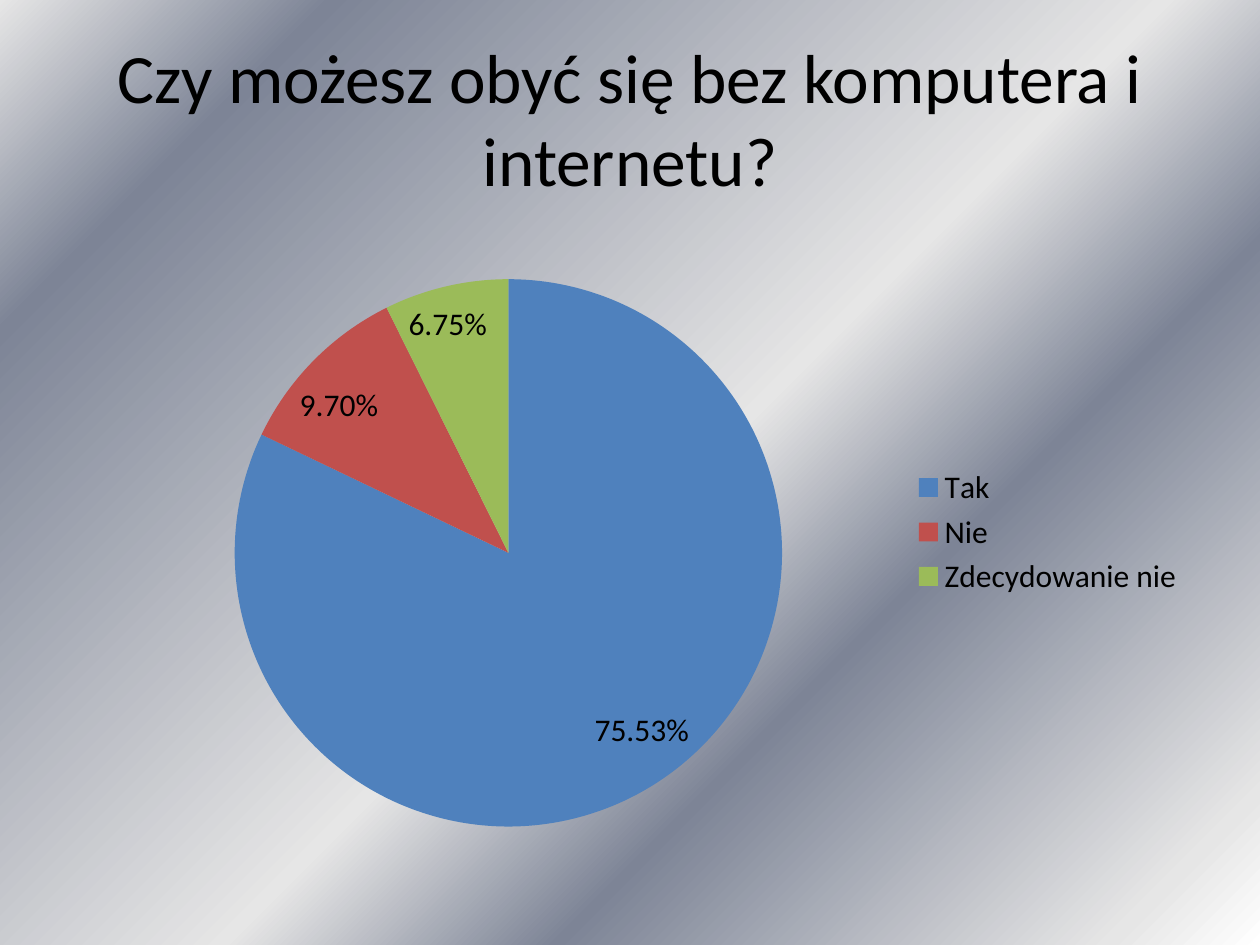
from dataclasses import dataclass

from lxml.etree import SubElement
from pptx import Presentation
from pptx.chart.data import CategoryChartData
from pptx.dml.color import RGBColor
from pptx.enum.chart import XL_CHART_TYPE, XL_LABEL_POSITION, XL_LEGEND_POSITION
from pptx.enum.text import MSO_ANCHOR, MSO_AUTO_SIZE, PP_ALIGN
from pptx.oxml.ns import qn
from pptx.util import Emu, Pt

SCALE = 914400 // 126


@dataclass(frozen=True)
class Theme:
    face: str = "Calibri"
    ink: str = "000000"
    title: float = 39.6
    body: float = 18
    slices: tuple = ("4F81BD", "C0504D", "9BBB59")
    stops: tuple = (
        (0, "FFFFFF"), (7, "E6E6E6"), (32, "7D8496"),
        (47, "E6E6E6"), (85, "7D8496"), (100, "E6E6E6"),
    )


THEME = Theme()


def px(num):
    return Emu(num * SCALE)


def apply(obj, vals):
    for key, val in vals.items():
        setattr(obj, key, val)


def place(box):
    return dict(zip(("left", "top", "width", "height"), map(px, box)))


def style(font, size):
    apply(font, {"name": THEME.face, "size": Pt(size), "bold": False})
    font.color.rgb = RGBColor.from_string(THEME.ink)


def add_back(slide):
    fill = slide.background.fill
    fill.gradient()
    fill.gradient_angle = 135
    stops = slide.background._cSld.find(".//" + qn("a:gsLst"))
    stops.clear()
    for pos, color in THEME.stops:
        stop = SubElement(stops, qn("a:gs"), pos=str(pos * 1000))
        SubElement(stop, qn("a:srgbClr"), val=color)


def add_title(slide, box, text):
    shape = slide.shapes.title
    apply(shape, place(box))
    frame = shape.text_frame
    apply(frame, {
        "text": text,
        "word_wrap": True,
        "auto_size": MSO_AUTO_SIZE.NONE,
        "vertical_anchor": MSO_ANCHOR.MIDDLE,
    })
    para = frame.paragraphs[0]
    para.alignment = PP_ALIGN.CENTER
    style(para.runs[0].font, THEME.title)


def add_pie(slide, box, shares):
    data = CategoryChartData(number_format="0.00%")
    data.categories = list(shares)
    data.add_series("Series 1", list(shares.values()))
    chart = slide.shapes.add_chart(
        XL_CHART_TYPE.PIE, *map(px, box), data).chart
    apply(chart, {"has_title": False, "has_legend": True})
    style(chart.font, THEME.body)
    apply(chart.legend, {
        "position": XL_LEGEND_POSITION.RIGHT,
        "include_in_layout": False,
    })
    plot = chart.plots[0]
    apply(plot, {"vary_by_categories": True, "has_data_labels": True})
    apply(plot.data_labels, {
        "show_value": True,
        "show_percentage": False,
        "number_format": "0.00%",
        "number_format_is_linked": False,
        "position": XL_LABEL_POSITION.BEST_FIT,
    })
    for idx, color in enumerate(THEME.slices):
        fill = plot.series[0].points[idx].format.fill
        fill.solid()
        fill.fore_color.rgb = RGBColor.from_string(color)


def main():
    deck = Presentation()
    apply(deck, {"slide_width": px(1260), "slide_height": px(945)})
    slide = deck.slides.add_slide(deck.slide_layouts[5])
    add_back(slide)
    add_title(slide, (63, 38, 1134, 158),
              "Czy możesz obyć się bez komputera i internetu?")
    add_pie(slide, (63, 220, 1134, 624),
            {"Tak": 0.7553, "Nie": 0.097, "Zdecydowanie nie": 0.0675})
    deck.save("out.pptx")


if __name__ == "__main__":
    main()
